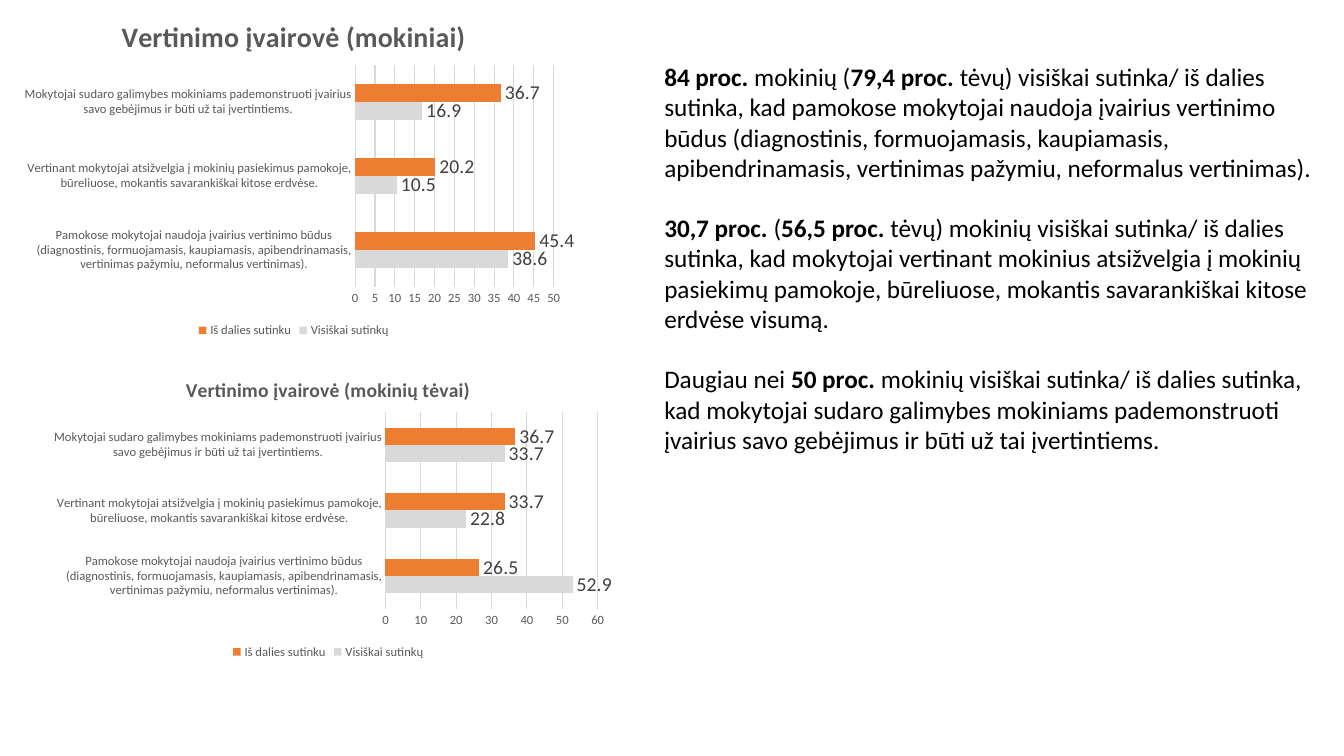
from lxml.etree import SubElement
from pptx import Presentation
from pptx.chart.data import CategoryChartData
from pptx.dml.color import RGBColor
from pptx.enum.chart import XL_CHART_TYPE, XL_LABEL_POSITION, XL_LEGEND_POSITION, XL_TICK_MARK
from pptx.oxml.ns import qn
from pptx.util import Inches, Pt

FONT = "Calibri"
CATEGORIES = [
    "Pamokose mokytojai naudoja įvairius vertinimo būdus (diagnostinis, formuojamasis, "
    "kaupiamasis, apibendrinamasis, vertinimas pažymiu, neformalus vertinimas).",
    "Vertinant mokytojai atsižvelgia į mokinių pasiekimus pamokoje, būreliuose, "
    "mokantis savarankiškai kitose erdvėse.",
    "Mokytojai sudaro galimybes mokiniams pademonstruoti įvairius savo gebėjimus "
    "ir būti už tai įvertintiems.",
]
SERIES = [("Visiškai sutinkų", "D9D9D9"), ("Iš dalies sutinku", "ED7D31")]
CHARTS = [
    dict(title="Vertinimo įvairovė (mokiniai)", size=20, box=(0.14, 0, 5.56, 3.39),
         plot=(0.61, 0.19, 0.355, 0.65), gap=219, top=50, step=5,
         values=[(38.6, 10.5, 16.9), (45.4, 20.2, 36.7)]),
    dict(title="Vertinimo įvairovė (mokinių tėvai)", size=14, box=(0.41, 3.58, 5.69, 3),
         plot=(0.6, 0.17, 0.37, 0.65), gap=182, top=60, step=10,
         values=[(52.9, 22.8, 33.7), (26.5, 33.7, 36.7)]),
]
FINDINGS = [
    [("84 proc. ", True), ("mokinių (", False), ("79,4 proc. ", True),
     ("tėvų) visiškai sutinka/ iš dalies sutinka, kad pamokose mokytojai naudoja įvairius "
      "vertinimo būdus (diagnostinis, formuojamasis, kaupiamasis, apibendrinamasis, "
      "vertinimas pažymiu, neformalus vertinimas).", False)],
    [("30,7 proc. ", True), ("(", False), ("56,5 proc. ", True),
     ("tėvų) mokinių visiškai sutinka/ iš dalies sutinka, kad mokytojai vertinant mokinius "
      "atsižvelgia į mokinių pasiekimų pamokoje, būreliuose, mokantis savarankiškai kitose "
      "erdvėse visumą.", False)],
    [("Daugiau nei ", False), ("50 proc. ", True),
     ("mokinių visiškai sutinka/ iš dalies sutinka, kad mokytojai sudaro galimybes mokiniams "
      "pademonstruoti įvairius savo gebėjimus ir būti už tai įvertintiems.", False)],
]


def color(hex_value):
    return RGBColor.from_string(hex_value)


def set_font(font, size, hex_value, bold=False):
    font.name, font.size = FONT, Pt(size)
    font.bold = bold
    font.color.rgb = color(hex_value)


def set_line(line):
    line.color.rgb = color("D9D9D9")
    line.width = Pt(0.75)


def place_plot(chart, plot):
    area = chart._chartSpace.find(".//" + qn("c:plotArea"))
    for old in area.findall(qn("c:layout")):
        area.remove(old)
    layout = SubElement(area, qn("c:layout"))
    area.insert(0, layout)
    manual = SubElement(layout, qn("c:manualLayout"))
    settings = [("layoutTarget", "inner"), ("xMode", "edge"), ("yMode", "edge"),
                *zip("xywh", plot)]
    for tag, value in settings:
        SubElement(manual, qn("c:" + tag)).set("val", str(value))


def add_survey_chart(s, info):
    data = CategoryChartData(number_format="General")
    data.categories = CATEGORIES
    for (name, _), values in zip(SERIES, info["values"]):
        data.add_series(name, values)
    box = [Inches(v) for v in info["box"]]
    chart = s.shapes.add_chart(XL_CHART_TYPE.BAR_CLUSTERED, *box, data).chart
    set_font(chart.font, 10, "000000")

    chart.has_title = True
    p = chart.chart_title.text_frame.paragraphs[0]
    p.text = info["title"]
    set_font(p.font, info["size"], "595959", True)
    chart.chart_title.include_in_layout = False

    chart.has_legend = True
    chart.legend.position = XL_LEGEND_POSITION.BOTTOM
    chart.legend.include_in_layout = False
    set_font(chart.legend.font, 9, "595959")

    for axis in (chart.category_axis, chart.value_axis):
        axis.major_tick_mark = axis.minor_tick_mark = XL_TICK_MARK.NONE
        set_font(axis.tick_labels.font, 9, "595959")
    set_line(chart.category_axis.format.line)
    scale = chart.value_axis
    scale.minimum_scale, scale.maximum_scale = 0, info["top"]
    scale.major_unit = info["step"]
    scale.has_major_gridlines = True
    set_line(scale.major_gridlines.format.line)
    scale.format.line.fill.background()

    bars = chart.plots[0]
    bars.gap_width, bars.overlap = info["gap"], 0
    bars.vary_by_categories = False
    for series, (_, fill) in zip(bars.series, SERIES):
        series.format.fill.solid()
        series.format.fill.fore_color.rgb = color(fill)
        labels = series.data_labels
        labels.show_value = True
        labels.position = XL_LABEL_POSITION.OUTSIDE_END
        set_font(labels.font, 14, "404040")
    place_plot(chart, info["plot"])


def add_findings(s):
    tf = s.shapes.add_textbox(Inches(6.49), Inches(0.56), Inches(6.67), Inches(4.04)).text_frame
    tf.word_wrap = True
    for i, runs in enumerate(FINDINGS):
        p = tf.add_paragraph() if i else tf.paragraphs[0]
        p.font.name, p.font.size = FONT, Pt(18)
        p.font.color.rgb = color("000000")
        p.space_before = Pt(21.6 if i else 0)
        for text, bold in runs:
            r = p.add_run()
            r.text, r.font.bold = text, bold


def main():
    prs = Presentation()
    prs.slide_width, prs.slide_height = Inches(13.33), Inches(7.5)
    s = prs.slides.add_slide(prs.slide_layouts[6])
    for info in CHARTS:
        add_survey_chart(s, info)
    add_findings(s)
    prs.save("out.pptx")


if __name__ == "__main__":
    main()
